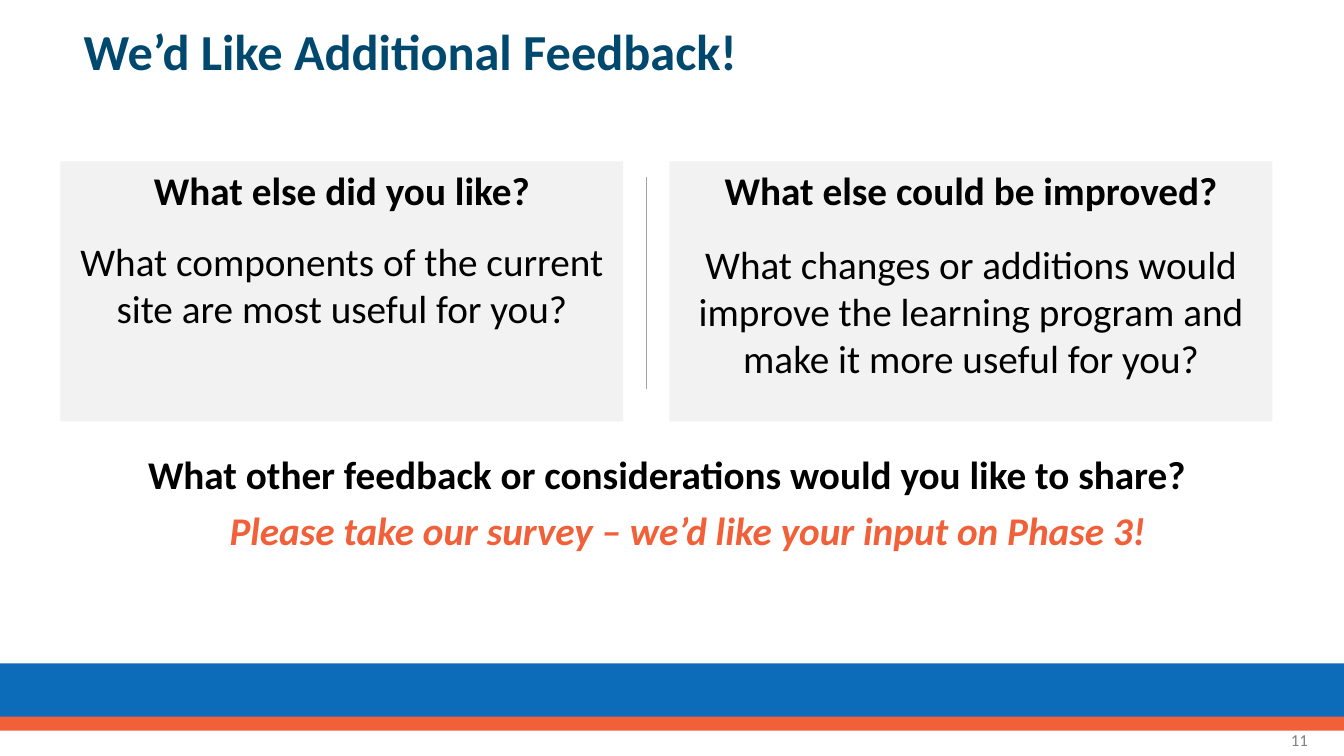
from lxml.etree import SubElement
from pptx import Presentation
from pptx.dml.color import RGBColor
from pptx.enum.shapes import MSO_CONNECTOR, MSO_SHAPE
from pptx.enum.text import MSO_ANCHOR, MSO_AUTO_SIZE, PP_ALIGN
from pptx.oxml.ns import qn
from pptx.util import Inches, Pt

COLORS = {
    "title": "00486E",
    "blue": "0D6CB9",
    "orange": "F16038",
    "panel": "F2F2F2",
    "divider": "A2A2A2",
    "number": "808080",
    "text": "000000",
}
PANEL_TOP, PANEL_HEIGHT = 1.6, 2.58


def color(name):
    """Return the named colour."""
    return RGBColor.from_string(COLORS[name])


def write(para, text, size=28, ink="text", bold=False, italic=False,
          align=PP_ALIGN.LEFT, after=0):
    """Fill a paragraph and format it."""
    para.text = text
    para.alignment = align
    para.space_after = Pt(after)
    font = para.font
    font.name, font.size = "Calibri", Pt(size)
    font.bold, font.italic = bold, italic
    font.color.rgb = color(ink)


def add_block(page, left, top, width, height, fill):
    """Add a plain filled rectangle."""
    block = page.shapes.add_shape(MSO_SHAPE.RECTANGLE, Inches(left), Inches(top),
                                  Inches(width), Inches(height))
    block.shadow.inherit = False
    block.fill.solid()
    block.fill.fore_color.rgb = color(fill)
    block.line.fill.background()
    return block


def add_panel(page, left, width, heading, question, gap):
    """Add a grey panel with a bold heading over a question."""
    frame = add_block(page, left, PANEL_TOP, width, PANEL_HEIGHT, "panel").text_frame
    frame.word_wrap = True
    frame.vertical_anchor = MSO_ANCHOR.TOP
    write(frame.paragraphs[0], heading, bold=True, align=PP_ALIGN.CENTER, after=gap)
    write(frame.add_paragraph(), question, align=PP_ALIGN.CENTER, after=6)


def add_text_box(page, left, top, width, height):
    """Add a wrapping text box and return its frame."""
    box = page.shapes.add_textbox(Inches(left), Inches(top),
                                  Inches(width), Inches(height))
    box.text_frame.word_wrap = True
    return box.text_frame


def add_title(page, text):
    """Place and fill the title placeholder."""
    title = page.shapes.title
    title.left, title.top = Inches(0.73), Inches(0.13)
    title.width, title.height = Inches(12), Inches(0.82)
    frame = title.text_frame
    frame.auto_size = MSO_AUTO_SIZE.NONE
    frame.vertical_anchor = MSO_ANCHOR.MIDDLE
    write(frame.paragraphs[0], text, size=36, ink="title", bold=True)
    frame.paragraphs[0].line_spacing = 0.9


def add_divider(page, x, top, bottom):
    """Add a thin vertical line."""
    line = page.shapes.add_connector(MSO_CONNECTOR.STRAIGHT, Inches(x), Inches(top),
                                     Inches(x), Inches(bottom))
    line.line.color.rgb = color("divider")
    line.line.width = Pt(0.5)
    SubElement(line._element.spPr, qn("a:effectLst"))


def main():
    """Build the feedback slide."""
    deck = Presentation()
    deck.slide_width, deck.slide_height = Inches(13.33), Inches(7.5)
    page = deck.slides.add_slide(deck.slide_layouts[5])

    add_block(page, 0, 6.58, 13.33, 0.58, "blue")
    add_block(page, 0, 7.11, 13.33, 0.14, "orange")
    add_title(page, "We’d Like Additional Feedback!")

    add_panel(page, 0.6, 5.58, "What else did you like?",
              "What components of the current site are most useful for you?", 17)
    add_panel(page, 6.64, 5.98, "What else could be improved?",
              "What changes or additions would improve the learning program "
              "and make it more useful for you?", 19)
    add_divider(page, 6.41, 1.76, 3.86)

    number = add_text_box(page, 10.07, 7.14, 3, 0.4)
    number.vertical_anchor = MSO_ANCHOR.MIDDLE
    write(number.paragraphs[0], "11", size=12, ink="number", align=PP_ALIGN.RIGHT)

    closing = add_text_box(page, 1.37, 4.42, 10.9, 1.13)
    write(closing.paragraphs[0],
          "What other feedback or considerations would you like to share?",
          bold=True, after=6)
    write(closing.add_paragraph(),
          "Please take our survey – we’d like your input on Phase 3!",
          ink="orange", bold=True, italic=True, align=PP_ALIGN.CENTER, after=6)

    deck.save("out.pptx")


if __name__ == "__main__":
    main()
